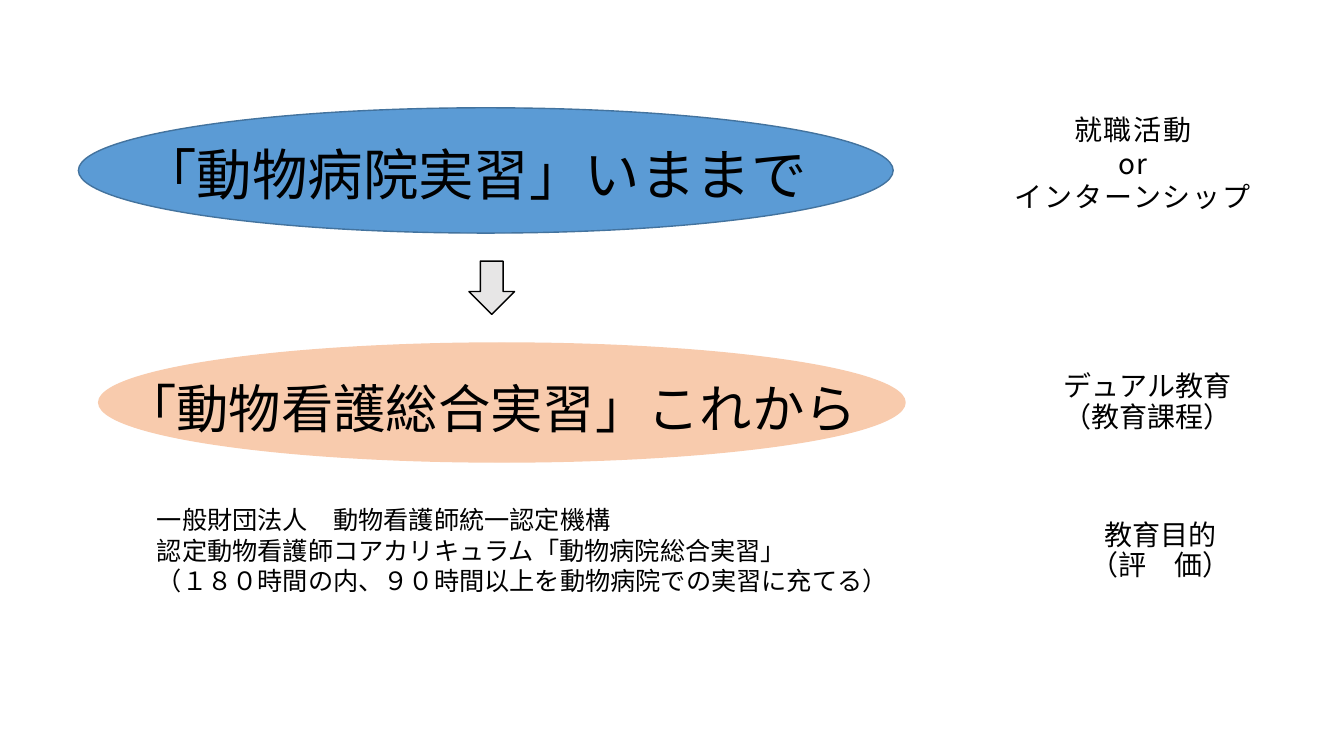
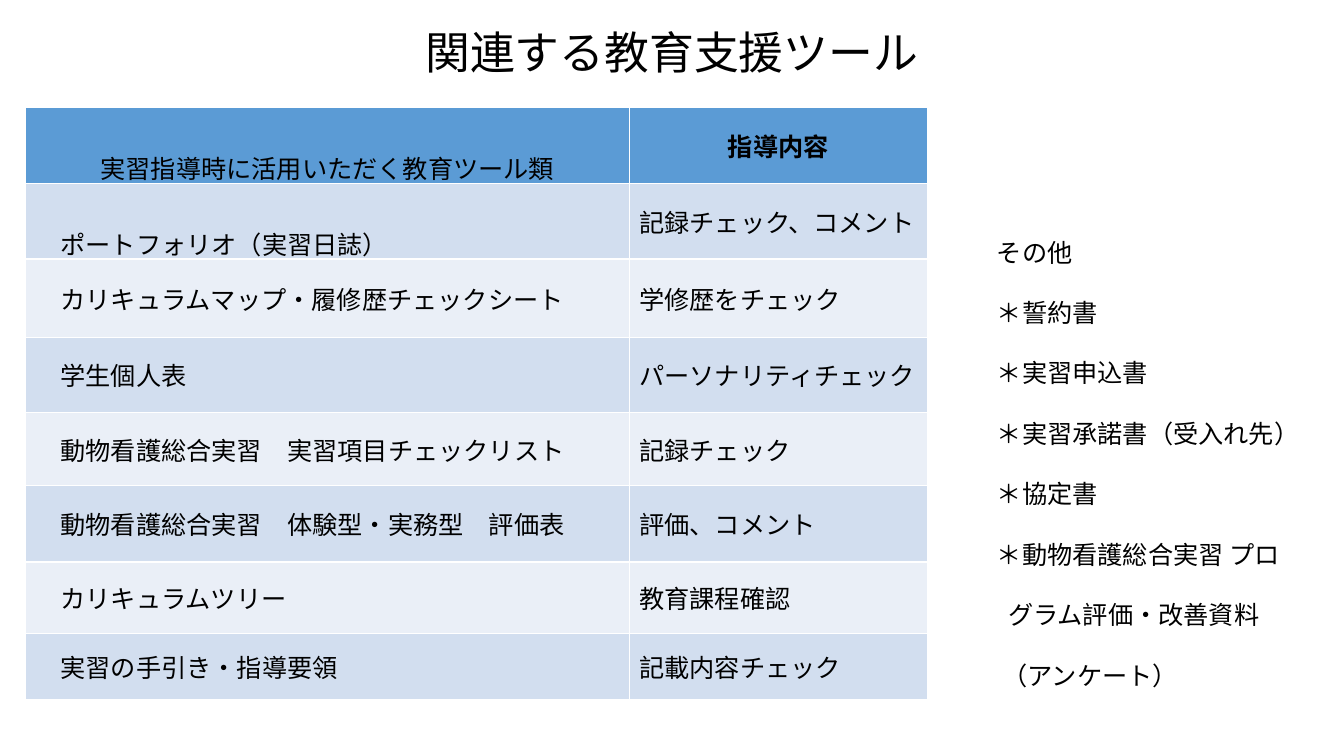
from dataclasses import dataclass

from pptx import Presentation
from pptx.dml.color import RGBColor
from pptx.enum.shapes import MSO_SHAPE
from pptx.enum.text import MSO_ANCHOR, PP_ALIGN
from pptx.oxml.ns import qn
from pptx.util import Pt


# Theme
@dataclass(frozen=True)
class Theme:
    font: str = "Noto Sans CJK JP"
    ink: str = "000000"
    blue: str = "5B9BD5"
    edge: str = "43739E"
    peach: str = "F8CBAD"
    grey: str = "E7E6E6"
    bands: tuple = ("D2DEEF", "EAEFF7")
    past: float = 39.6
    future: float = 37.4
    title: float = 32
    side: float = 20
    body: float = 18


T = Theme()
MID, TOP = MSO_ANCHOR.MIDDLE, MSO_ANCHOR.TOP
LEFT, CENTER = PP_ALIGN.LEFT, PP_ALIGN.CENTER

# Content, slide 1: shapes as (kind, box, fill, line)
SHAPES = [
    (MSO_SHAPE.OVAL, (70.5, 245, 576, 85), T.peach, T.peach),
    (MSO_SHAPE.OVAL, (56, 77, 582, 89.5), T.blue, T.edge),
    (MSO_SHAPE.DOWN_ARROW, (335, 186.5, 32.5, 38), T.grey, T.ink),
]

# Texts as (box, lines, format)
SIDE = dict(size=T.side, align=CENTER, anchor=MID, gap=0.9)
TEXTS = [
    ((70.5, 94.5, 536, 65), ["「動物病院実習」いままで"],
     dict(size=T.past, align=CENTER, anchor=MID, gap=0.9)),
    ((689, 77, 240.5, 80), ["就職活動", "or", "インターンシップ"],
     dict(size=T.side, align=CENTER, track=1.3)),
    ((710, 235.5, 219.5, 104.5), ["デュアル教育", "（教育課程）"], SIDE),
    ((63.5, 261.5, 574.5, 67.5), ["「動物看護総合実習」これから"],
     dict(size=T.future, align=CENTER, anchor=MID, gap=0.8)),
    ((105, 357, 541, 73),
     ["一般財団法人　動物看護師統一認定機構",
      "認定動物看護師コアカリキュラム「動物病院総合実習」",
      "（１８０時間の内、９０時間以上を動物病院での実習に充てる）"], {}),
    ((719.5, 341.5, 219.5, 104.5), ["教育目的", "（評　価）"], SIDE),
]

# Content, slide 2: lines may be (text, indent)
TOOLS = [
    ((66, 19, 828, 41), ["関連する教育支援ツール"],
     dict(size=T.title, align=CENTER, anchor=MID, gap=0.9)),
    ((705, 144, 232, 356.5),
     ["その他", "＊誓約書", "＊実習申込書", "＊実習承諾書（受入れ先）",
      "＊協定書", "＊動物看護総合実習 プロ",
      ("グラム評価・改善資料", 8), ("（アンケート）", 4)], dict(gap=2)),
]

HEAD = ("実習指導時に活用いただく教育ツール類", "指導内容")
ROWS = [
    ("ポートフォリオ（実習日誌）", "記録チェック、コメント"),
    ("カリキュラムマップ・履修歴チェックシート", "学修歴をチェック"),
    ("学生個人表", "パーソナリティチェック"),
    ("動物看護総合実習　実習項目チェックリスト", "記録チェック"),
    ("動物看護総合実習　体験型・実務型　評価表", "評価、コメント"),
    ("カリキュラムツリー", "教育課程確認"),
    ("実習の手引き・指導要領", "記載内容チェック"),
]
WIDTHS = (431.5, 213)
HEIGHTS = (54, 54, 56, 53.5, 52.5, 54.5, 51, 47)


# Helpers
def paint(fill, color):
    fill.solid()
    fill.fore_color.rgb = RGBColor.from_string(color)


def write(frame, lines, size=T.body, align=LEFT, gap=1, bold=False, track=0):
    for i, line in enumerate(lines):
        words, indent = line if isinstance(line, tuple) else (line, 0)
        para = frame.add_paragraph() if i else frame.paragraphs[0]
        para.alignment, para.line_spacing = align, float(gap)
        if indent:
            props = para._p.get_or_add_pPr()
            props.set("marL", str(Pt(indent)))
            props.set("indent", "0")
        run = para.add_run()
        run.text = words
        font = run.font
        font.name, font.size, font.bold = T.font, Pt(size), bold
        font.color.rgb = RGBColor.from_string(T.ink)
        props = run._r.get_or_add_rPr()
        east = props.makeelement(qn("a:ea"), {"typeface": T.font})
        props.find(qn("a:latin")).addnext(east)
        if track:
            props.set("spc", str(round(track * 100)))


def label(slide, box, lines, anchor=TOP, **look):
    frame = slide.shapes.add_textbox(*map(Pt, box)).text_frame
    frame.word_wrap = True
    frame.vertical_anchor = anchor
    write(frame, lines, **look)


def draw(slide, kind, box, fill, line):
    shape = slide.shapes.add_shape(kind, *map(Pt, box))
    shape.shadow.inherit = False
    paint(shape.fill, fill)
    paint(shape.line.fill, line)
    shape.line.width = Pt(1)


def grid(slide, left, top):
    rows = [HEAD, *ROWS]
    table = slide.shapes.add_table(
        len(rows), len(WIDTHS), Pt(left), Pt(top),
        Pt(sum(WIDTHS)), Pt(sum(HEIGHTS))).table
    for col, width in zip(table.columns, WIDTHS):
        col.width = Pt(width)
    for r, (row, height) in enumerate(zip(rows, HEIGHTS)):
        table.rows[r].height = Pt(height)
        for c, words in enumerate(row):
            cell = table.cell(r, c)
            head, first = r == 0, c == 0
            paint(cell.fill, T.blue if head else T.bands[(r - 1) % 2])
            cell.vertical_anchor = TOP if head and first else MID
            # The first column is set in by one character
            indent = T.body if first and not head else 0
            write(cell.text_frame, [(words, indent)],
                  align=CENTER if head else LEFT,
                  gap=2 if first and r < 2 else 1,
                  bold=head and not first)


def main():
    deck = Presentation()
    deck.slide_width, deck.slide_height = Pt(960), Pt(540)
    blank = deck.slide_layouts[6]

    # Slide 1: from past to future
    slide = deck.slides.add_slide(blank)
    for item in SHAPES:
        draw(slide, *item)
    for box, lines, look in TEXTS:
        label(slide, box, lines, **look)

    # Slide 2: teaching tools
    slide = deck.slides.add_slide(blank)
    for box, lines, look in TOOLS:
        label(slide, box, lines, **look)
    grid(slide, 18, 77)

    deck.save("out.pptx")


if __name__ == "__main__":
    main()
